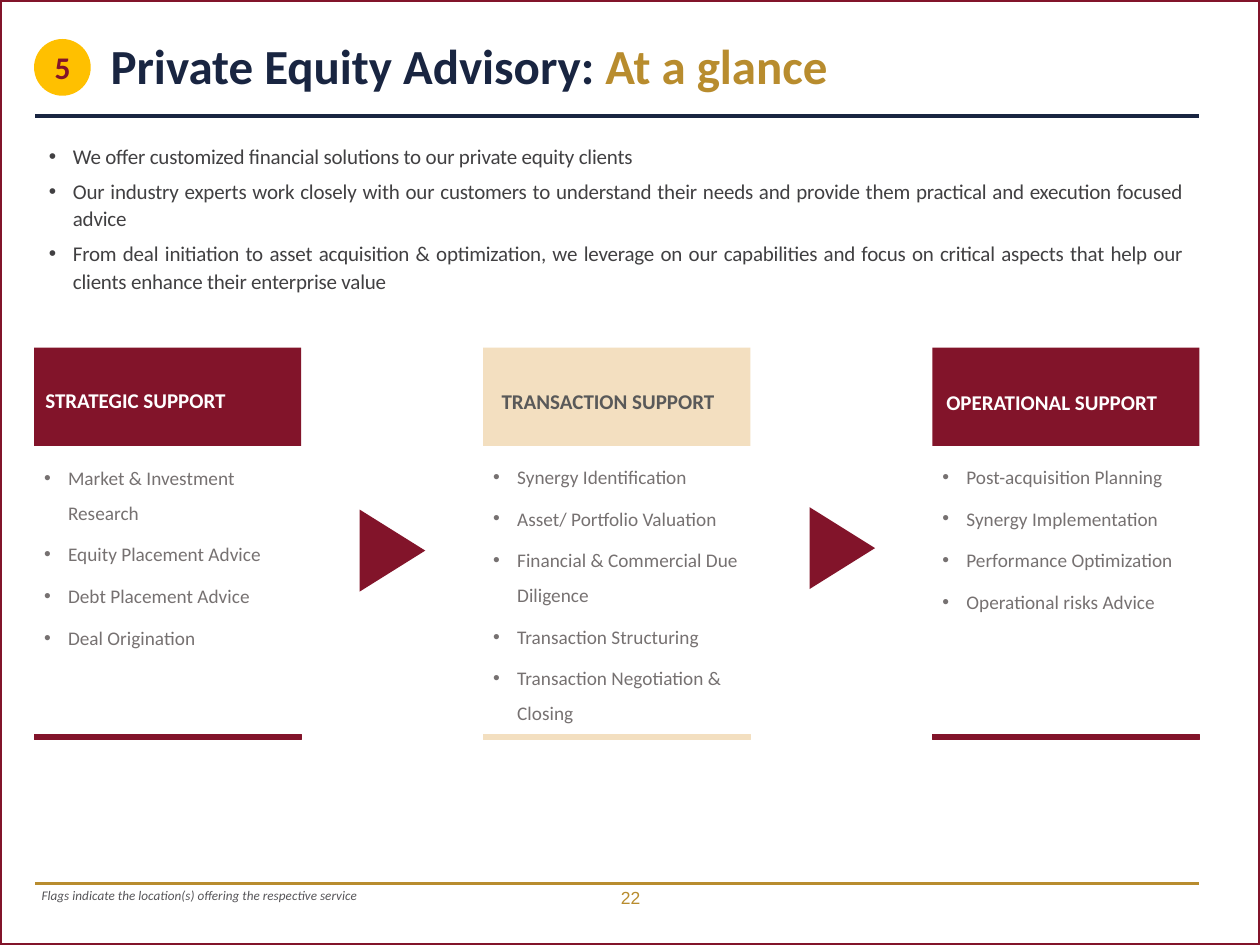
"""Builds the private equity advisory slide with three linked support columns."""
from lxml import etree
from pptx import Presentation
from pptx import util as u
from pptx.dml.color import RGBColor
from pptx.enum import shapes, text
from pptx.oxml import ns

WINE = RGBColor(0x82, 0x14, 0x2A)
SAND = RGBColor(0xF3, 0xDF, 0xC0)
NAVY = RGBColor(0x19, 0x25, 0x41)
GOLD = RGBColor(0xB8, 0x8C, 0x2E)
AMBER = RGBColor(0xFF, 0xC0, 0x00)
WHITE = RGBColor(0xFF, 0xFF, 0xFF)
GREY = RGBColor(0x76, 0x71, 0x71)
SLATE = RGBColor(0x59, 0x59, 0x59)
INK = RGBColor(0x41, 0x40, 0x42)
NOTE = RGBColor(0x56, 0x55, 0x59)

INTRO = [
    "We offer customized financial solutions to our private equity clients",
    "Our industry experts work closely with our customers to understand their needs "
    "and provide them practical and execution focused advice",
    "From deal initiation to asset acquisition & optimization, we leverage on our "
    "capabilities and focus on critical aspects that help our clients enhance their "
    "enterprise value",
]
COLUMNS = [
    ("STRATEGIC SUPPORT", WINE, WHITE, (0.32, 3.0), 3.61,
     ["Market & Investment Research", "Equity Placement Advice",
      "Debt Placement Advice", "Deal Origination"]),
    ("TRANSACTION SUPPORT", SAND, SLATE, (3.94, 3.01), 3.6,
     ["Synergy Identification", "Asset/ Portfolio Valuation",
      "Financial & Commercial Due Diligence", "Transaction Structuring",
      "Transaction Negotiation & Closing"]),
    ("OPERATIONAL SUPPORT", WINE, WHITE, (7.47, 3.02), 3.6,
     ["Post-acquisition Planning", "Synergy Implementation",
      "Performance Optimization", "Operational risks Advice"]),
]


def add_text(par, words, size=12, color=INK, bold=False, italic=False,
             face="Calibri", track=0):
    run = par.add_run()
    run.text = words
    font = run.font
    font.size, font.name = u.Pt(size), face
    font.bold, font.italic = bold, italic
    font.color.rgb = color
    if track:
        run._r.get_or_add_rPr().set("spc", str(track))


def add_bullet(par, color, left, hang):
    props = par._p.get_or_add_pPr()
    props.set("marL", str(u.Inches(left)))
    props.set("indent", str(-u.Inches(hang)))
    tint = etree.SubElement(props, ns.qn("a:buClr"))
    etree.SubElement(tint, ns.qn("a:srgbClr"), val=str(color))
    etree.SubElement(props, ns.qn("a:buFont"), typeface="Arial")
    etree.SubElement(props, ns.qn("a:buChar"), char="•")


class Deck:
    """Holds the style and the current slide."""

    def __init__(self):
        self.show = Presentation()
        self.show.slide_width, self.show.slide_height = u.Inches(10), u.Inches(7.5)
        self.slide = self.show.slides.add_slide(self.show.slide_layouts[6])

    def shape(self, place, fill=None, line=None, width=1, kind="RECTANGLE", turn=0):
        item = self.slide.shapes.add_shape(
            getattr(shapes.MSO_SHAPE, kind), *map(u.Inches, place))
        item.shadow.inherit = False
        item.rotation = turn
        if fill is None:
            item.fill.background()
        else:
            item.fill.solid()
            item.fill.fore_color.rgb = fill
        if line is None:
            item.line.fill.background()
        else:
            item.line.color.rgb = line
            item.line.width = u.Pt(width)
        return item

    def rule(self, top, color, width):
        item = self.slide.shapes.add_connector(
            shapes.MSO_CONNECTOR.STRAIGHT, u.Inches(0.28), u.Inches(top),
            u.Inches(9.52), u.Inches(top))
        item.line.color.rgb = color
        item.line.width = u.Pt(width)
        etree.SubElement(item._element.spPr, ns.qn("a:effectLst"))

    def frame(self, place, pad=(0.1, 0.05), middle=False):
        frame = self.slide.shapes.add_textbox(*map(u.Inches, place)).text_frame
        frame.word_wrap = True
        frame.margin_left = frame.margin_right = u.Inches(pad[0])
        frame.margin_top = frame.margin_bottom = u.Inches(pad[1])
        frame.vertical_anchor = text.MSO_ANCHOR.MIDDLE if middle else text.MSO_ANCHOR.TOP
        return frame

    def label(self, place, words, pad=(0.1, 0.05), middle=True, align=None,
              space=None, **style):
        par = self.frame(place, pad, middle).paragraphs[0]
        par.alignment, par.line_spacing = align, space
        add_text(par, words, **style)
        return par

    def bullets(self, place, items, space, pad=(0.1, 0.05), left=0.19, align=None,
                **style):
        frame = self.frame(place, pad)
        for i, words in enumerate(items):
            par = frame.add_paragraph() if i else frame.paragraphs[0]
            par.alignment, par.line_spacing = align, space
            par.space_before, par.space_after = u.Pt(2 if i else 0), u.Pt(2)
            add_bullet(par, style["color"], left, 0.19)
            add_text(par, words, **style)

    def badge(self, place, words):
        frame = self.shape(place, AMBER, kind="OVAL").text_frame
        frame.vertical_anchor = text.MSO_ANCHOR.MIDDLE
        par = frame.paragraphs[0]
        par.alignment = text.PP_ALIGN.CENTER
        add_text(par, words, size=18, color=WINE, bold=True)

    def column(self, left, title, fill, color, spot, top, items):
        self.shape((left, 2.76, 2.12, 0.78), fill)
        self.label((*spot, 1.92, 0.31), title, pad=(0.04, 0.04), space=1.2,
                   color=color, bold=True)
        self.shape((left, 5.83, 2.12, 0.04), fill, fill, 0.25)
        self.bullets((left + 0.08, top, 1.96, 2.17), items, 1.5, pad=(0, 0),
                     size=11, color=GREY)


def main():
    deck = Deck()
    deck.rule(7.01, GOLD, 1.5)
    deck.rule(0.92, NAVY, 2)
    deck.shape((0, 0, 10, 7.5), line=WINE, width=2)
    for i, column in enumerate(COLUMNS):
        deck.column(0.27 + 3.565 * i, *column)
    for left, top in ((2.79, 4.11), (6.36, 4.09)):
        deck.shape((left, top, 0.65, 0.52), WINE, kind="ISOSCELES_TRIANGLE", turn=90)
    deck.bullets((0.27, 1.07, 9.22, 1.31), INTRO, 1.1, left=0.21,
                 align=text.PP_ALIGN.JUSTIFY, color=INK, track=-10)
    title = deck.label((0.78, 0.22, 9.07, 0.59), "Private Equity Advisory: ",
                       size=28, color=NAVY, bold=True)
    add_text(title, "At a glance", size=28, color=GOLD, bold=True)
    deck.label((3.88, 6.99, 2.25, 0.27), "22", align=text.PP_ALIGN.CENTER,
               size=10, color=GOLD, face="Arial")
    deck.badge((0.27, 0.31, 0.45, 0.45), "5")
    deck.label((0.28, 7.02, 8.65, 0.17),
               "Flags indicate the location(s) offering the respective service",
               pad=(0.05, 0.02), middle=False, size=7.5, color=NOTE, italic=True)
    deck.show.save("out.pptx")


if __name__ == "__main__":
    main()
